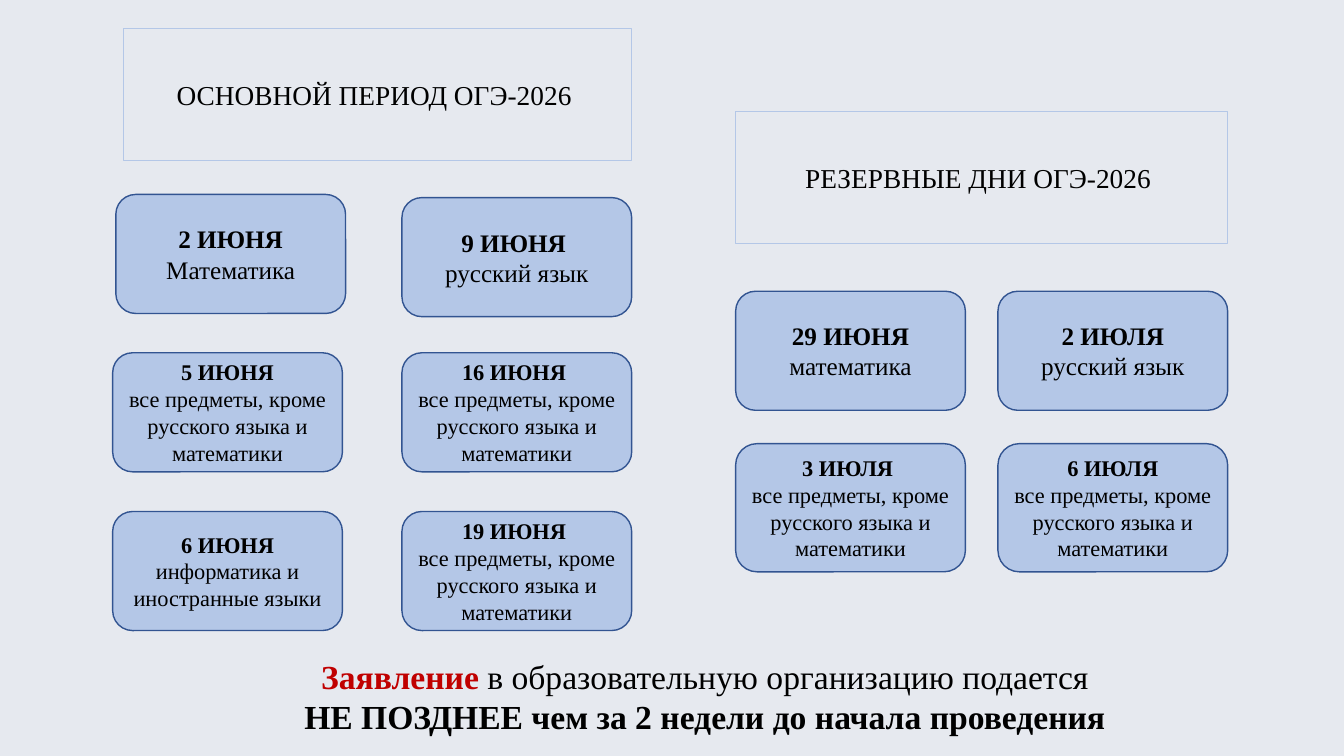
from pptx import Presentation
from pptx.dml.color import RGBColor
from pptx.enum.shapes import MSO_SHAPE
from pptx.enum.text import MSO_ANCHOR, MSO_AUTO_SIZE, PP_ALIGN
from pptx.util import Cm, Pt

FONT = "Times New Roman"
COLORS = {
    "background": "E6E9EF",
    "card": "B4C7E7",
    "border": "325491",
    "text": "000000",
    "accent": "C00000",
}
OTHER_SUBJECTS = "все предметы, кроме русского языка и математики"
PERIODS = [
    {
        "heading": "ОСНОВНОЙ ПЕРИОД ОГЭ-2026 ",
        "heading_box": (3.12, 0.72, 12.8, 3.33),
        "columns": (2.84, 10.13),
        "rows": ((4.98, 3, 18), (8.89, 3, 16), (12.89, 3, 16)),
        "exams": [
            [["2 ИЮНЯ ", "Математика"], ["9 ИЮНЯ ", "русский язык"]],
            [["5 ИЮНЯ", OTHER_SUBJECTS], ["16 ИЮНЯ ", OTHER_SUBJECTS]],
            [["6 ИЮНЯ ", "информатика и иностранные языки"], ["19 ИЮНЯ ", OTHER_SUBJECTS]],
        ],
    },
    {
        "heading": "РЕЗЕРВНЫЕ ДНИ ОГЭ-2026 ",
        "heading_box": (18.54, 2.8, 12.4, 3.33),
        "columns": (18.54, 25.15),
        "rows": ((7.34, 3, 18), (11.18, 3.23, 16)),
        "exams": [
            [["29 ИЮНЯ ", "математика"], ["2 ИЮЛЯ", "русский язык"]],
            [["3 ИЮЛЯ ", OTHER_SUBJECTS], ["6 ИЮЛЯ", OTHER_SUBJECTS]],
        ],
    },
]
SINGLE_PARAGRAPH = {"Математика", "математика", "информатика и иностранные языки"}
NUDGES = {"2 ИЮНЯ ": (0.08, -0.08)}
CARD_WIDTH = 5.79
NOTICE = [
    [("Заявление ", True, "accent"), ("в образовательную организацию подается", False, "text")],
    [("НЕ ПОЗДНЕЕ чем за 2 недели до начала проведения", True, "text")],
]
NOTICE_BOX = (3.73, 16.4, 28.07, 2.31)


def rgb(name):
    return RGBColor.from_string(COLORS[name])


def write(frame, paragraphs, size):
    frame.word_wrap = True
    for index, runs in enumerate(paragraphs):
        paragraph = frame.add_paragraph() if index else frame.paragraphs[0]
        paragraph.alignment = PP_ALIGN.CENTER
        for text, bold, color in runs:
            run = paragraph.add_run()
            run.text = text
            run.font.name = FONT
            run.font.size = Pt(size)
            run.font.bold = bold
            run.font.color.rgb = rgb(color)


def add_panel(slide, preset, box, fill, border, border_width, paragraphs, size):
    panel = slide.shapes.add_shape(preset, *map(Cm, box))
    panel.shadow.inherit = False
    if fill:
        panel.fill.solid()
        panel.fill.fore_color.rgb = rgb(fill)
    else:
        panel.fill.background()
    panel.line.color.rgb = rgb(border)
    panel.line.width = Pt(border_width)
    panel.text_frame.vertical_anchor = MSO_ANCHOR.MIDDLE
    write(panel.text_frame, paragraphs, size)


def add_period(slide, period):
    heading = [[(period["heading"], False, "text")]]
    add_panel(slide, MSO_SHAPE.RECTANGLE, period["heading_box"], None, "card", 0.75, heading, 19.5)
    for (top, height, size), exams in zip(period["rows"], period["exams"]):
        for left, (date, subject) in zip(period["columns"], exams):
            dx, dy = NUDGES.get(date, (0, 0))
            box = (left + dx, top + dy, CARD_WIDTH, height)
            runs = [(date, True, "text"), (subject, False, "text")]
            paragraphs = [runs] if subject in SINGLE_PARAGRAPH else [[run] for run in runs]
            add_panel(slide, MSO_SHAPE.ROUNDED_RECTANGLE, box, "card", "border", 1, paragraphs, size)


def main():
    deck = Presentation()
    deck.slide_width, deck.slide_height = Cm(33.87), Cm(19.05)
    slide = deck.slides.add_slide(deck.slide_layouts[6])
    slide.background.fill.solid()
    slide.background.fill.fore_color.rgb = rgb("background")
    for period in PERIODS:
        add_period(slide, period)
    notice = slide.shapes.add_textbox(*map(Cm, NOTICE_BOX))
    write(notice.text_frame, NOTICE, 24)
    notice.text_frame.auto_size = MSO_AUTO_SIZE.SHAPE_TO_FIT_TEXT
    deck.save("out.pptx")


if __name__ == "__main__":
    main()
